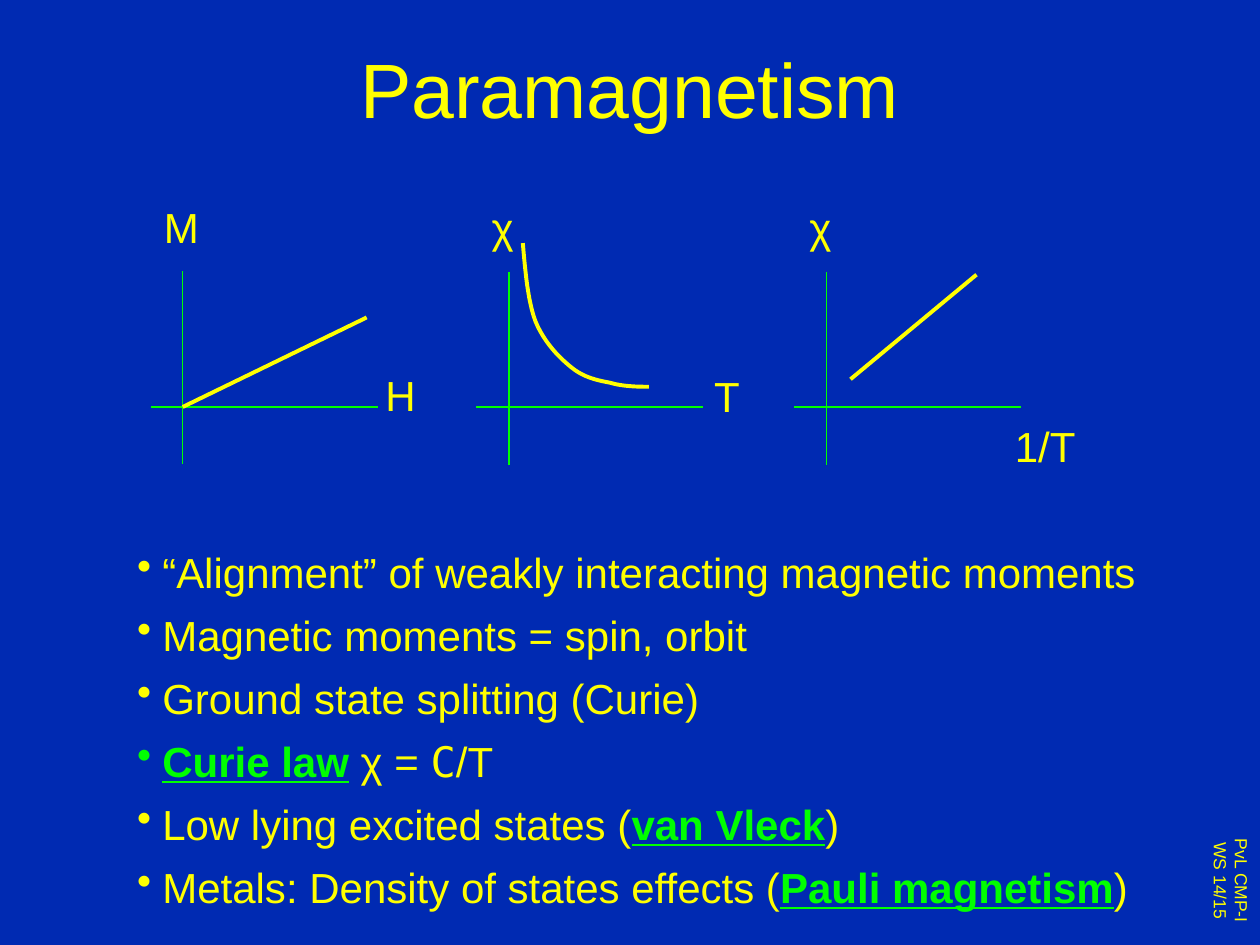
from dataclasses import dataclass

from lxml import etree
from pptx import Presentation
from pptx.dml.color import RGBColor
from pptx.enum.shapes import MSO_CONNECTOR as Connector
from pptx.enum.text import MSO_ANCHOR as Anchor, MSO_AUTO_SIZE as AutoSize, PP_ALIGN as Align
from pptx.oxml.ns import qn
from pptx.util import Inches, Pt

BLUE, YELLOW, GREEN = "002AB2", "FFFF00", "00FF00"
Point = tuple[float, float]
Box = tuple[float, float, float, float]


@dataclass
class Run:
    text: str
    key_term: bool = False
    font: str = "Arial"


@dataclass
class Label:
    text: str
    box: Box


@dataclass
class Plot:
    origin: Point
    axis_top: float
    axis_left: float
    labels: list[Label]
    trend: tuple[Point, Point] | None = None
    curve: list[Point] | None = None


PLOTS = [
    Plot((1.45, 3.23), 2.15, 1.2,
         [Label("H", (2.96, 2.88, 0.44, 0.5)), Label("M", (1.2, 1.55, 0.48, 0.5))],
         trend=((1.45, 3.23), (2.91, 2.52))),
    Plot((4.04, 3.23), 2.16, 3.78,
         [Label("T", (5.57, 2.89, 0.4, 0.5)), Label("χ", (3.8, 1.55, 0.38, 0.5))],
         curve=[(4.15, 1.93), (4.17, 2.16), (4.19, 2.39), (4.25, 2.55),
                (4.32, 2.72), (4.44, 2.84), (4.54, 2.92),
                (4.64, 3), (4.75, 3.02), (4.85, 3.04),
                (4.95, 3.07), (5.09, 3.07), (5.15, 3.07)]),
    Plot((6.56, 3.23), 2.16, 6.3,
         [Label(" 1/T", (7.91, 2.89, 0.77, 0.5)), Label("χ", (6.32, 1.55, 0.38, 0.5))],
         trend=((6.75, 3.01), (7.75, 2.18))),
]
AXIS_WIDTH, AXIS_HEIGHT = 1.8, 1.53

BULLETS = [
    [Run("“Alignment” of weakly interacting magnetic moments")],
    [Run("Magnetic moments = spin, orbit")],
    [Run("Ground state splitting (Curie)")],
    [Run("Curie law", True), Run(" χ = "), Run("C", font="DejaVu Sans Mono"), Run("/Τ")],
    [Run("Low lying excited states ("), Run("van Vleck", True), Run(")")],
    [Run("Metals: Density of states effects ("), Run("Pauli magnetism", True), Run(")")],
]


def color(value: str) -> RGBColor:
    return RGBColor.from_string(value)


def add_text(shapes, box: Box, lines: list[list[Run]], size: float, align=Align.CENTER, **frame_format):
    """Add a text box with one paragraph for each list of runs."""
    frame = shapes.add_textbox(*map(Inches, box)).text_frame
    settings = {"word_wrap": False, "auto_size": AutoSize.SHAPE_TO_FIT_TEXT} | frame_format
    for name, value in settings.items():
        setattr(frame, name, value)
    for index, runs in enumerate(lines):
        paragraph = frame.paragraphs[0] if index == 0 else frame.add_paragraph()
        paragraph.alignment = align
        for item in runs:
            run = paragraph.add_run()
            run.text = item.text
            font_format = {"name": item.font, "size": Pt(size),
                           "bold": item.key_term, "underline": item.key_term}
            for name, value in font_format.items():
                setattr(run.font, name, value)
            run.font.color.rgb = color(GREEN if item.key_term else YELLOW)
    return frame


def add_bullet(paragraph) -> None:
    paragraph.line_spacing = 1.25
    properties = paragraph._p.get_or_add_pPr()
    properties.set("marL", str(Inches(0.32)))
    properties.set("indent", str(Inches(-0.2)))
    etree.SubElement(properties, qn("a:buChar")).set("char", "•")


def add_line(shapes, start: Point, end: Point, line_color: str, width: float) -> None:
    line = shapes.add_connector(Connector.STRAIGHT, *map(Inches, start + end))
    line.line.color.rgb = color(line_color)
    line.line.width = Pt(width)
    etree.SubElement(line._element.spPr, qn("a:effectLst"))


def bezier_points(controls: list[Point], steps: int = 12) -> list[Point]:
    """Sample a chain of cubic curves that share their end points."""
    points = [controls[0]]
    for first in range(0, len(controls) - 1, 3):
        segment = controls[first:first + 4]
        for step in range(1, steps + 1):
            t = step / steps
            weights = ((1 - t) ** 3, 3 * t * (1 - t) ** 2, 3 * t ** 2 * (1 - t), t ** 3)
            points.append(tuple(sum(w * p[axis] for w, p in zip(weights, segment)) for axis in (0, 1)))
    return points


def add_curve(shapes, controls: list[Point]) -> None:
    points = [(Inches(x), Inches(y)) for x, y in bezier_points(controls)]
    builder = shapes.build_freeform(*points[0])
    builder.add_line_segments(points[1:], close=False)
    curve = builder.convert_to_shape()
    curve.shadow.inherit = False
    curve.fill.background()
    curve.line.color.rgb = color(YELLOW)
    curve.line.width = Pt(2.25)


def add_plot(slide, plot: Plot) -> None:
    shapes = slide.shapes.add_group_shape().shapes
    x, y = plot.origin
    add_line(shapes, (x, plot.axis_top), (x, plot.axis_top + AXIS_HEIGHT), GREEN, 0.75)
    add_line(shapes, (plot.axis_left, y), (plot.axis_left + AXIS_WIDTH, y), GREEN, 0.75)
    for label in plot.labels:
        add_text(shapes, label.box, [[Run(label.text)]], 24)
    if plot.trend:
        add_line(shapes, *plot.trend, YELLOW, 2.25)
    if plot.curve:
        add_curve(shapes, plot.curve)


def main() -> None:
    presentation = Presentation()
    presentation.slide_width, presentation.slide_height = Inches(10), Inches(7.5)
    slide = presentation.slides.add_slide(presentation.slide_layouts[6])
    slide.background.fill.solid()
    slide.background.fill.fore_color.rgb = color(BLUE)

    # Course mark, turned to run down the right edge
    course = add_text(slide.shapes, (9.45, 6.6, 0.54, 0.78), [[Run("PvL CMP-I")], [Run("WS 14/15")]], 10)
    course._txBody.bodyPr.set("vert", "vert")

    # Title
    add_text(slide.shapes, (0.75, 0.07, 8.5, 1.25), [[Run("Paramagnetism")]], 44,
             word_wrap=True, auto_size=AutoSize.NONE, vertical_anchor=Anchor.MIDDLE)

    # Bullet list
    bullets = add_text(slide.shapes, (0.87, 4.19, 8.34, 3.1), BULLETS, 24, Align.LEFT)
    for paragraph in bullets.paragraphs:
        add_bullet(paragraph)

    # Magnetisation and susceptibility plots
    for plot in PLOTS:
        add_plot(slide, plot)

    presentation.save("out.pptx")


if __name__ == "__main__":
    main()
